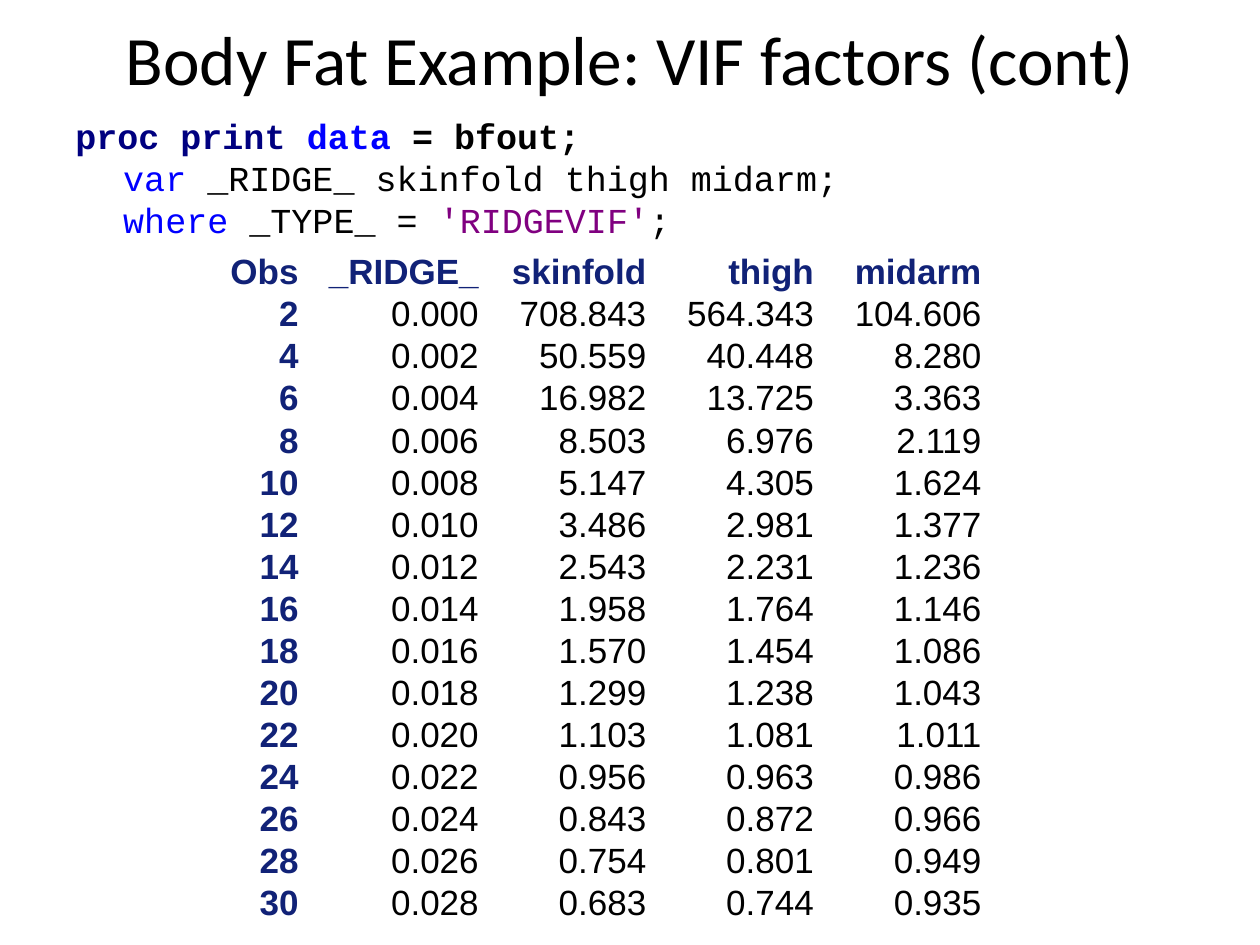
from pptx import Presentation
from pptx.dml.color import RGBColor
from pptx.enum.text import MSO_ANCHOR, PP_ALIGN
from pptx.util import Inches, Pt

TITLE = "Body Fat Example: VIF factors (cont)"
BLACK, NAVY, BLUE, PURPLE, HEADING = "000000", "000080", "0000FF", "800080", "112277"

# Each code line: bold or not, then its coloured pieces
CODE = [
    (True, [("proc print ", NAVY), ("data", BLUE), (" = bfout;", BLACK)]),
    (False, [("\t", NAVY), ("var", BLUE), (" _RIDGE_ skinfold thigh midarm;", BLACK)]),
    (False, [("\t", NAVY), ("where", BLUE), (" _TYPE_ = ", BLACK),
             ("'RIDGEVIF'", PURPLE), (";", BLACK)]),
]

ROWS = [
    ("Obs", "_RIDGE_", "skinfold", "thigh", "midarm"),
    ("2", "0.000", "708.843", "564.343", "104.606"),
    ("4", "0.002", "50.559", "40.448", "8.280"),
    ("6", "0.004", "16.982", "13.725", "3.363"),
    ("8", "0.006", "8.503", "6.976", "2.119"),
    ("10", "0.008", "5.147", "4.305", "1.624"),
    ("12", "0.010", "3.486", "2.981", "1.377"),
    ("14", "0.012", "2.543", "2.231", "1.236"),
    ("16", "0.014", "1.958", "1.764", "1.146"),
    ("18", "0.016", "1.570", "1.454", "1.086"),
    ("20", "0.018", "1.299", "1.238", "1.043"),
    ("22", "0.020", "1.103", "1.081", "1.011"),
    ("24", "0.022", "0.956", "0.963", "0.986"),
    ("26", "0.024", "0.843", "0.872", "0.966"),
    ("28", "0.026", "0.754", "0.801", "0.949"),
    ("30", "0.028", "0.683", "0.744", "0.935"),
]
COLUMN_WIDTHS = [0.66, 1.43, 1.33, 1.33, 1.33]
HEADER_HEIGHT, ROW_HEIGHT = 0.34, 0.32


def style(span, font, size, color, bold=False):
    span.font.name = font
    span.font.size = Pt(size)
    span.font.bold = bold
    span.font.color.rgb = RGBColor.from_string(color)


def add_text_frame(page, left, top, width, height):
    box = page.shapes.add_textbox(Inches(left), Inches(top), Inches(width), Inches(height))
    box.text_frame.word_wrap = True
    return box.text_frame


def add_title(page):
    frame = add_text_frame(page, 0.5, 0, 9, 0.92)
    frame.text = TITLE
    frame.vertical_anchor = MSO_ANCHOR.MIDDLE
    para = frame.paragraphs[0]
    para.alignment = PP_ALIGN.CENTER
    style(para.runs[0], "Calibri", 39.6, BLACK)


def add_code(page):
    frame = add_text_frame(page, 0.5, 0.86, 9, 1.3)
    for number, (bold, pieces) in enumerate(CODE):
        para = frame.add_paragraph() if number else frame.paragraphs[0]
        para.line_spacing = Pt(24)
        properties = para._p.get_or_add_pPr()
        properties.set("marL", str(Inches(0.38)))
        properties.set("indent", str(-Inches(0.38)))
        for text, color in pieces:
            span = para.add_run()
            span.text = text
            style(span, "Courier New", 20, color, bold)


def add_vif_table(page):
    height = HEADER_HEIGHT + ROW_HEIGHT * (len(ROWS) - 1)
    table = page.shapes.add_table(
        len(ROWS), len(COLUMN_WIDTHS), Inches(1.75), Inches(1.99),
        Inches(sum(COLUMN_WIDTHS)), Inches(height)).table
    table.first_row = table.horz_banding = False
    for column, width in zip(table.columns, COLUMN_WIDTHS):
        column.width = Inches(width)
    for r, values in enumerate(ROWS):
        table.rows[r].height = Inches(ROW_HEIGHT if r else HEADER_HEIGHT)
        for c, value in enumerate(values):
            cell = table.cell(r, c)
            cell.fill.background()
            cell.vertical_anchor = MSO_ANCHOR.MIDDLE
            cell.margin_left = cell.margin_right = Inches(0.04)
            cell.margin_top = cell.margin_bottom = 0
            cell.text_frame.text = value
            para = cell.text_frame.paragraphs[0]
            para.alignment = PP_ALIGN.RIGHT
            heading = r == 0 or c == 0
            style(para.runs[0], "Arial", 20, HEADING if heading else BLACK, heading)


def main():
    deck = Presentation()
    deck.slide_width, deck.slide_height = Inches(10), Inches(7.5)
    page = deck.slides.add_slide(deck.slide_layouts[6])
    add_title(page)
    add_code(page)
    add_vif_table(page)
    deck.save("out.pptx")


if __name__ == "__main__":
    main()
